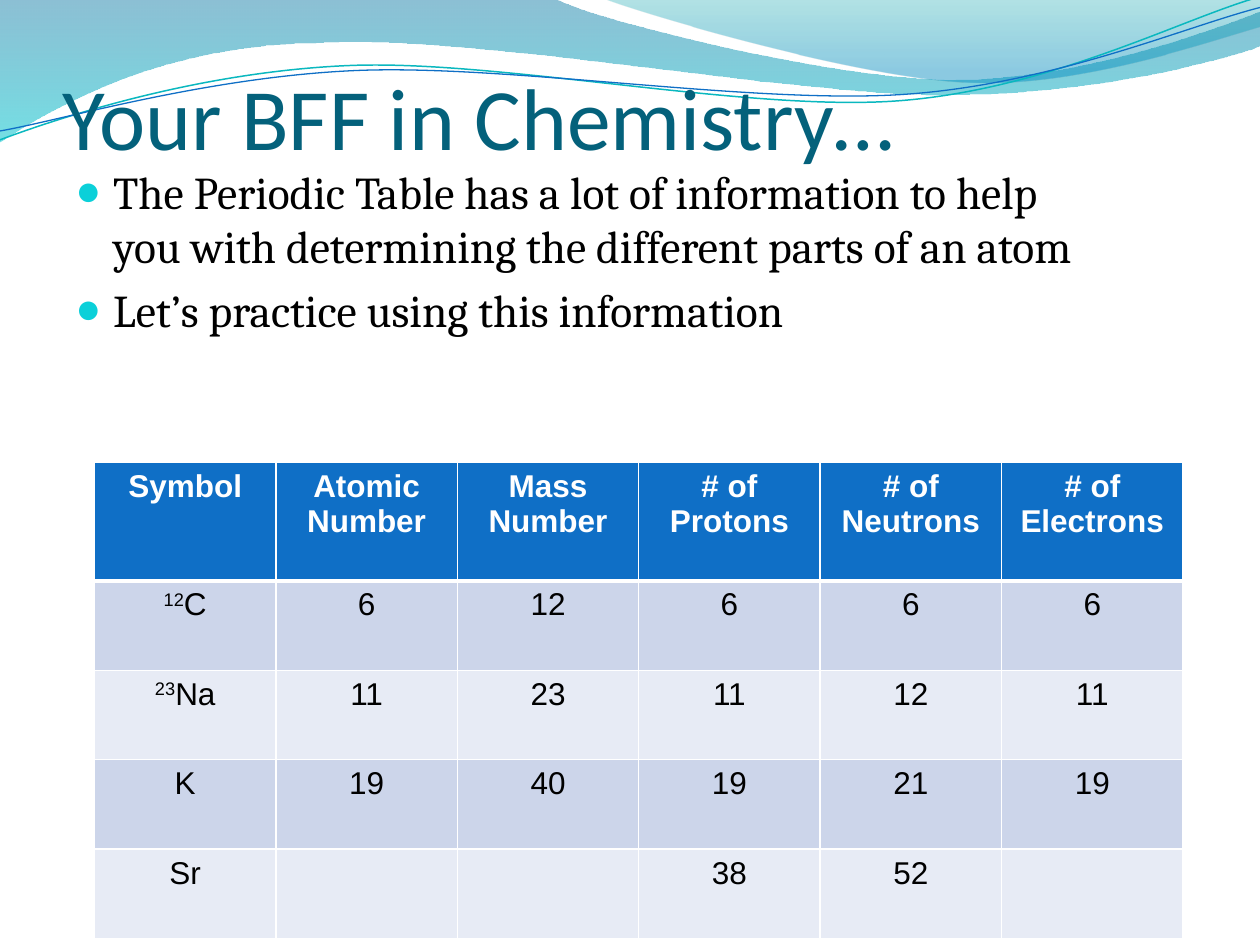
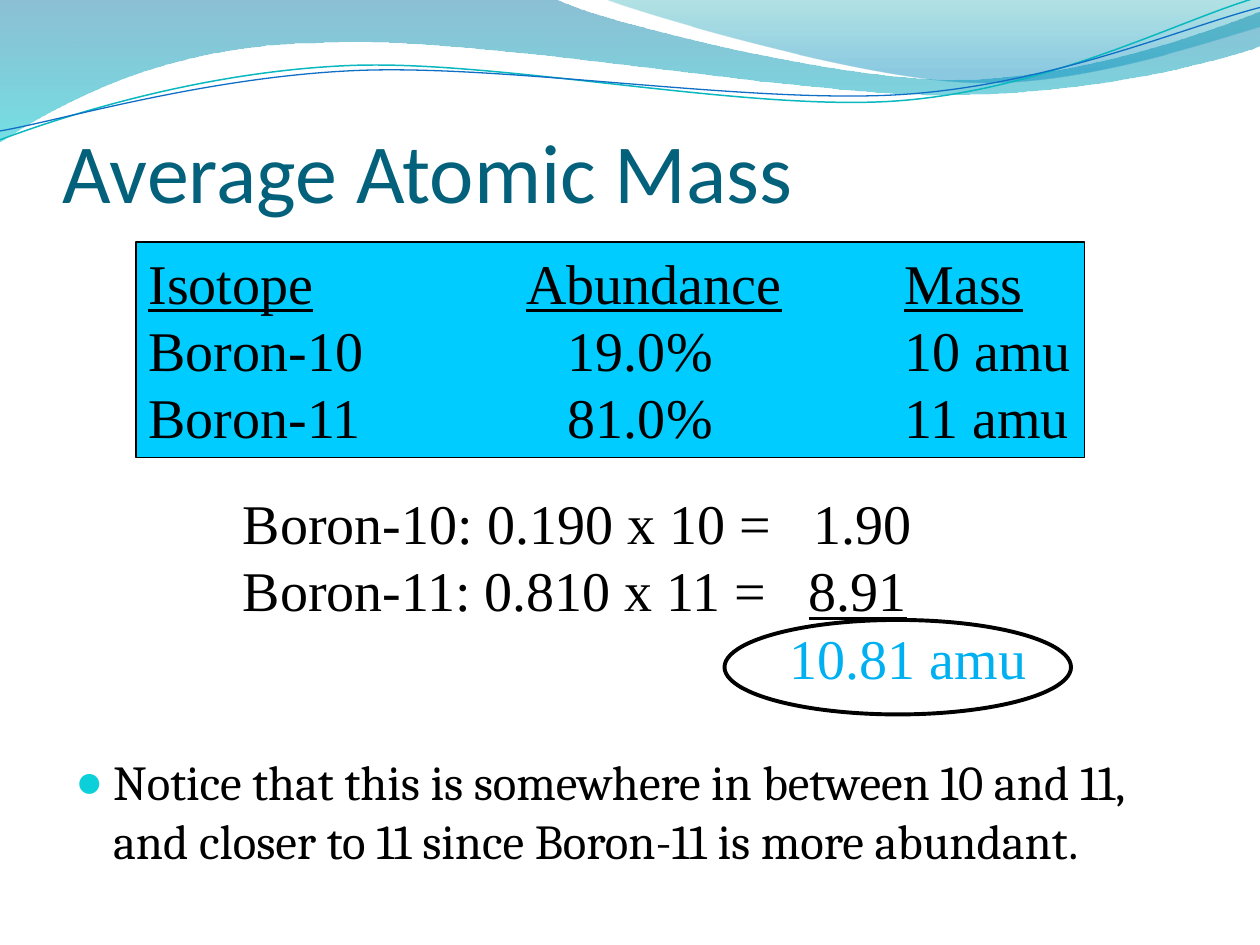
from dataclasses import dataclass
from math import cos, radians, sin

from lxml.etree import SubElement
from pptx import Presentation
from pptx.dml.color import RGBColor as Color
from pptx.enum.shapes import MSO_SHAPE as Shape
from pptx.enum.text import MSO_ANCHOR as Anchor, PP_ALIGN as Align
from pptx.oxml import parse_xml
from pptx.oxml.ns import nsdecls, qn
from pptx.util import Pt

SCALE = 9144
WAVE_TILT = -2.7


@dataclass(frozen=True)
class Theme:
    title_color: str = "04617B"
    bullet: str = "0BD0D9"
    ink: str = "000000"
    paper: str = "FFFFFF"
    header: str = "0F6FC6"
    bands: tuple = ("CCD5EA", "E7EBF5")
    panel: str = "00CCFF"
    answer: str = "00B0F0"
    teal_line: str = "0AB8BF"
    title_font: str = "Calibri"
    body_font: str = "Cambria"
    table_font: str = "Arial"
    math_font: str = "Times New Roman"
    table_size: int = 18
    math_size: int = 32


THEME = Theme()

RIBBONS = [
    {
        "start": (0, -1),
        "parts": [
            [(440, -1)],
            [(476, 17), (664, 63), (758, 63)],
            [(853, 63), (958, 26), (1000, 9)],
            [(1001, 36)],
            [(983, 44), (870, 76), (746, 75)],
            [(622, 75), (382, 28), (257, 34)],
            [(129, 35), (46, 83), (-1, 113)],
            [(0, -1)],
        ],
        "stops": [(0, "0074A1", 45), (1, "00C6CF", 55)],
    },
    {
        "start": (479, -1),
        "parts": [
            [(509, 11), (682, 62), (769, 65)],
            [(856, 69), (961, 32), (1000, 21)],
            [(1000, 0)],
            [(479, -1)],
        ],
        "stops": [(0, "00A1A9", 30), (0.8, "008BBF", 45)],
    },
]

WAVES = [
    {
        "start": (0, 111),
        "parts": [
            [(48, 93), (158, 57), (277, 52)],
            [(395, 47), (593, 89), (713, 80)],
            [(833, 71), (938, 15), (998, -2)],
        ],
        "center": (499, 57),
        "line": (THEME.teal_line, 0.85),
    },
    {
        "start": (0, 104),
        "parts": [
            [(47, 96), (164, 61), (283, 56)],
            [(403, 51), (597, 83), (717, 75)],
            [(836, 67), (941, 21), (1000, 6)],
        ],
        "center": (500, 59),
        "line": (THEME.header, 0.75),
    },
]

PERIODIC = {
    "title": ("Your BFF in Chemistry…", (50, 30, 817, 103), 50),
    "bullets": (
        [
            "The Periodic Table has a lot of information to help you with "
            "determining the different parts of an atom",
            "Let’s practice using this information",
        ],
        (50, 125, 817, 592),
        26,
    ),
}

ELEMENTS_BOX = (75, 367)
COLUMN_WIDTH, HEADER_HEIGHT, ROW_HEIGHT = 144, 94, 71
ELEMENTS = [
    ["Symbol", "Atomic Number", "Mass Number", "# of Protons", "# of Neutrons", "# of Electrons"],
    [("12", "C"), "6", "12", "6", "6", "6"],
    [("23", "Na"), "11", "23", "11", "12", "11"],
    ["K", "19", "40", "19", "21", "19"],
    ["Sr", "", "", "38", "52", ""],
]

AVERAGE = {
    "title": ("Average Atomic Mass", (50, 50, 900, 125), 48),
    "bullets": (
        [
            "Notice that this is somewhere in between 10 and 11, and closer "
            "to 11 since Boron-11 is more abundant."
        ],
        (50, 592, 900, 100),
        27.9,
    ),
}

UNDERLINED = {"underline": True}
ISOTOPE_BOX = (108, 192, 753, 171)
ISOTOPES = [
    ((300, 600), [("Isotope\tAbundance\tMass", UNDERLINED)]),
    ((333, 600), [("Boron-10\t19.0%\t10 amu", {})]),
    ((333, 600), [("Boron-11\t81.0%\t11 amu", {})]),
]
SUM_BOX = (183, 383, 647, 172)
SUM = [
    ((453,), [("Boron-10: 0.190 x 10 =\t1.90", {})]),
    ((449,), [("Boron-11: 0.810 x 11 =\t", {}), ("8.91", UNDERLINED)]),
    ((434,), [("\t", {}), ("10.81 amu", {"color": THEME.answer})]),
]
ANSWER_RING = (575, 492, 275, 75)


def px(value):
    return round(value * SCALE)


def place(box):
    return [px(value) for value in box]


def style(span, font, size, color=THEME.ink, bold=False, underline=False):
    span.font.name = font
    span.font.size = Pt(size)
    span.font.bold = bold
    span.font.underline = underline
    span.font.color.rgb = Color.from_string(color)


def paragraphs(frame, count):
    return [frame.paragraphs[0]] + [frame.add_paragraph() for _ in range(count - 1)]


def set_line(shape, color, width):
    shape.line.color.rgb = Color.from_string(color)
    shape.line.width = Pt(width)


def turn(point, center, degrees):
    angle = radians(degrees)
    x, y = point[0] - center[0], point[1] - center[1]
    return (center[0] + x * cos(angle) - y * sin(angle),
            center[1] + x * sin(angle) + y * cos(angle))


def add_outline(page, outline, close, tilt=0):
    center = outline.get("center", (0, 0))
    knots = [outline["start"]] + [knot for part in outline["parts"] for knot in part]
    points = [place(turn(knot, center, -tilt)) for knot in knots]
    builder = page.shapes.build_freeform(*points[0], scale=1.0)
    builder.add_line_segments(points[1:], close=close)
    shape = builder.convert_to_shape()
    shape.shadow.inherit = False
    shape.rotation = tilt % 360
    segments = iter(list(shape.element.iter(qn("a:lnTo"))))
    for part in outline["parts"]:
        group = [next(segments) for _ in part]
        if len(group) == 3:
            group[0].addprevious(curve := parse_xml(f'<a:cubicBezTo {nsdecls("a")}/>'))
            for segment in group:
                curve.append(segment[0])
                segment.getparent().remove(segment)
    return shape


def add_backdrop(page):
    for ribbon in RIBBONS:
        shape = add_outline(page, ribbon, True)
        shape.line.fill.background()
        shape.fill.gradient()
        shape.fill.gradient_angle = 270
        for stop, (position, color, _) in zip(shape.fill.gradient_stops, ribbon["stops"]):
            stop.position = position
            stop.color.rgb = Color.from_string(color)
        tints = shape.element.spPr.iter(qn("a:srgbClr"))
        for tint, (_, _, opacity) in zip(tints, ribbon["stops"]):
            SubElement(tint, qn("a:alpha"), val=str(opacity * 1000))
    for wave in WAVES:
        shape = add_outline(page, wave, False, WAVE_TILT)
        shape.fill.background()
        set_line(shape, *wave["line"])


def add_title(page, text, box, size):
    frame = page.shapes.add_textbox(*place(box)).text_frame
    frame.word_wrap = True
    frame.vertical_anchor = Anchor.BOTTOM
    frame.margin_left = frame.margin_right = frame.margin_bottom = 0
    frame.text = text
    style(frame.paragraphs[0].runs[0], THEME.title_font, size, THEME.title_color)


def add_bullets(page, texts, box, size):
    frame = page.shapes.add_textbox(*place(box)).text_frame
    frame.word_wrap = True
    for para, text in zip(paragraphs(frame, len(texts)), texts):
        para.text = text
        para.space_before = Pt(round(size * 0.2))
        style(para.runs[0], THEME.body_font, size)
        props = para._p.get_or_add_pPr()
        props.set("marL", str(px(30)))
        props.set("indent", str(px(-30)))
        color = SubElement(props, qn("a:buClr"))
        SubElement(color, qn("a:srgbClr"), val=THEME.bullet)
        SubElement(props, qn("a:buSzPct"), val="95000")
        SubElement(props, qn("a:buFont"), typeface=THEME.table_font)
        SubElement(props, qn("a:buChar"), char="●")


def fill_math(shape, lines):
    frame = shape.text_frame
    frame.word_wrap = True
    frame.vertical_anchor = Anchor.TOP
    frame.margin_right = 0
    for para, (stops, spans) in zip(paragraphs(frame, len(lines)), lines):
        para.alignment = Align.LEFT
        tabs = SubElement(para._p.get_or_add_pPr(), qn("a:tabLst"))
        for stop in stops:
            SubElement(tabs, qn("a:tab"), pos=str(px(stop)), algn="l")
        for text, look in spans:
            span = para.add_run()
            span.text = text
            style(span, THEME.math_font, THEME.math_size, **look)


def set_borders(cell, bottom):
    props = cell._tc.get_or_add_tcPr()
    for index, (side, width) in enumerate((("L", 1), ("R", 1), ("T", 1), ("B", bottom))):
        props.insert(index, parse_xml(
            f'<a:ln{side} {nsdecls("a")} w="{Pt(width)}"><a:solidFill>'
            f'<a:srgbClr val="{THEME.paper}"/></a:solidFill></a:ln{side}>'))


def fill_cell(cell, value, is_header, band):
    cell.fill.solid()
    cell.fill.fore_color.rgb = Color.from_string(band)
    set_borders(cell, 3 if is_header else 1)
    para = cell.text_frame.paragraphs[0]
    para.alignment = Align.CENTER
    pieces = value if isinstance(value, tuple) else (value,)
    for piece in filter(None, pieces):
        span = para.add_run()
        span.text = piece
        style(span, THEME.table_font, THEME.table_size, THEME.paper if is_header else THEME.ink, is_header)
    if len(pieces) > 1:
        para.runs[0]._r.get_or_add_rPr().set("baseline", "30000")


def add_elements(page):
    columns = len(ELEMENTS[0])
    heights = [HEADER_HEIGHT] + [ROW_HEIGHT] * (len(ELEMENTS) - 1)
    box = place((*ELEMENTS_BOX, COLUMN_WIDTH * columns, sum(heights)))
    table = page.shapes.add_table(len(ELEMENTS), columns, *box).table
    for r, (values, height) in enumerate(zip(ELEMENTS, heights)):
        table.rows[r].height = px(height)
        band = THEME.bands[(r - 1) % 2] if r else THEME.header
        for c, value in enumerate(values):
            fill_cell(table.cell(r, c), value, r == 0, band)


def add_isotopes(page):
    panel = page.shapes.add_shape(Shape.RECTANGLE, *place(ISOTOPE_BOX))
    panel.shadow.inherit = False
    panel.fill.solid()
    panel.fill.fore_color.rgb = Color.from_string(THEME.panel)
    set_line(panel, THEME.ink, 0.75)
    fill_math(panel, ISOTOPES)
    fill_math(page.shapes.add_textbox(*place(SUM_BOX)), SUM)
    ring = page.shapes.add_shape(Shape.OVAL, *place(ANSWER_RING))
    ring.shadow.inherit = False
    ring.fill.background()
    set_line(ring, THEME.ink, 2.25)


def main():
    deck = Presentation()
    deck.slide_width, deck.slide_height = px(1000), px(750)
    for content, add_detail in ((PERIODIC, add_elements), (AVERAGE, add_isotopes)):
        page = deck.slides.add_slide(deck.slide_layouts[6])
        add_backdrop(page)
        add_title(page, *content["title"])
        add_bullets(page, *content["bullets"])
        add_detail(page)
    deck.save("out.pptx")


if __name__ == "__main__":
    main()
